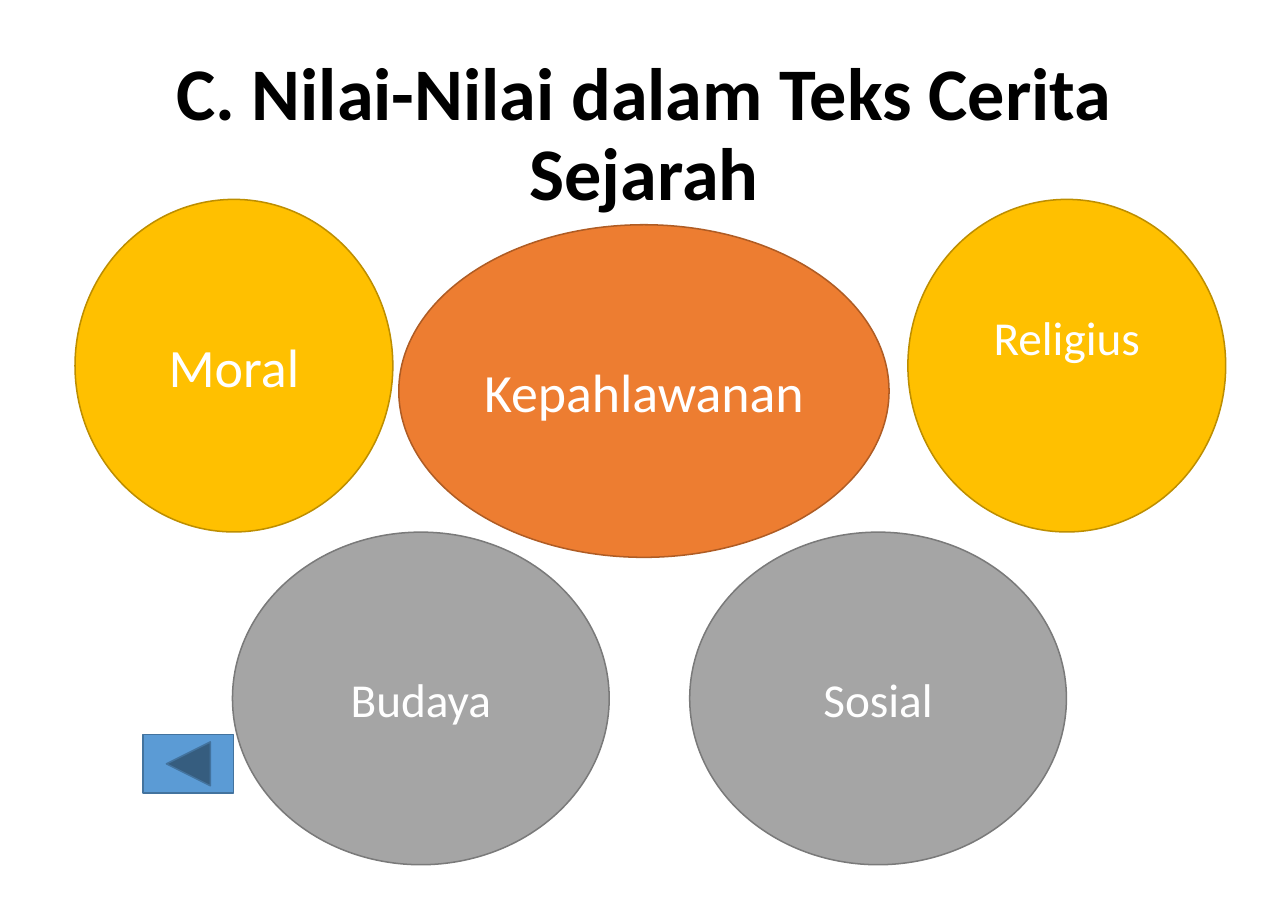
from pptx import Presentation
from pptx.dml.color import RGBColor
from pptx.enum.shapes import MSO_SHAPE
from pptx.enum.text import MSO_ANCHOR, PP_ALIGN
from pptx.util import Pt

ELLIPSE = MSO_SHAPE.OVAL
BACK_BUTTON = MSO_SHAPE.ACTION_BUTTON_BACK_OR_PREVIOUS
MIDDLE = MSO_ANCHOR.MIDDLE
CENTER = PP_ALIGN.CENTER

COLORS = {
    "black": "000000",
    "white": "FFFFFF",
    "gold": "FFC000",
    "gold_line": "BD8E00",
    "orange": "ED7D31",
    "orange_line": "AF5C24",
    "gray": "A5A5A5",
    "gray_line": "7A7A7A",
    "blue": "5B9BD5",
    "blue_line": "43739E",
}

TOP_ROW = 130.3
BOTTOM_ROW = 347.8
ELLIPSE_HEIGHT = 217.4
SIDE_WIDTH = 207.7
LOWER_WIDTH = 246.2

VALUES = [
    ("Moral", 49, TOP_ROW, SIDE_WIDTH, "gold", 35.3, 3.6),
    ("Kepahlawanan", 260.6, 146.9, 320.4, "orange", 35.2, 3.6),
    ("Budaya", 151.9, BOTTOM_ROW, LOWER_WIDTH, "gray", 30.9, 3.6),
    ("Sosial", 450.7, BOTTOM_ROW, LOWER_WIDTH, "gray", 30.9, 3.6),
    ("Religius", 593.3, TOP_ROW, SIDE_WIDTH, "gold", 30.9, 41.3),
]


def color(name):
    return RGBColor.from_string(COLORS[name])


def write_text(shape, text, size, color_name="white", bold=False,
               line_spacing=1.0, bottom_inset=3.6):
    frame = shape.text_frame
    frame.word_wrap = True
    frame.vertical_anchor = MIDDLE
    frame.margin_bottom = Pt(bottom_inset)
    paragraph = frame.paragraphs[0]
    paragraph.alignment = CENTER
    paragraph.line_spacing = line_spacing
    run = paragraph.add_run()
    run.text = text
    run.font.name = "Calibri"
    run.font.size = Pt(size)
    run.font.bold = bold
    run.font.color.rgb = color(color_name)


def add_filled_shape(slide, kind, left, top, width, height, fill):
    shape = slide.shapes.add_shape(kind, Pt(left), Pt(top), Pt(width), Pt(height))
    shape.shadow.inherit = False
    shape.fill.solid()
    shape.fill.fore_color.rgb = color(fill)
    shape.line.color.rgb = color(f"{fill}_line")
    shape.line.width = Pt(1)
    return shape


def add_title(slide, text):
    title = slide.shapes.add_textbox(Pt(57.6), Pt(31.7), Pt(726.5), Pt(115.2))
    write_text(title, text, 48.5, color_name="black", bold=True, line_spacing=0.9)


def add_value(slide, text, left, top, width, fill, size, bottom_inset):
    ellipse = add_filled_shape(slide, ELLIPSE, left, top, width, ELLIPSE_HEIGHT, fill)
    write_text(ellipse, text, size, bottom_inset=bottom_inset)


def main():
    presentation = Presentation()
    presentation.slide_width = Pt(841.68)
    presentation.slide_height = Pt(595.44)
    slide = presentation.slides.add_slide(presentation.slide_layouts[6])
    add_title(slide, "C. Nilai-Nilai dalam Teks Cerita Sejarah")
    for value in VALUES:
        add_value(slide, *value)
    add_filled_shape(slide, BACK_BUTTON, 93.6, 480.2, 59, 38.2, "blue")
    presentation.save("out.pptx")


if __name__ == "__main__":
    main()
